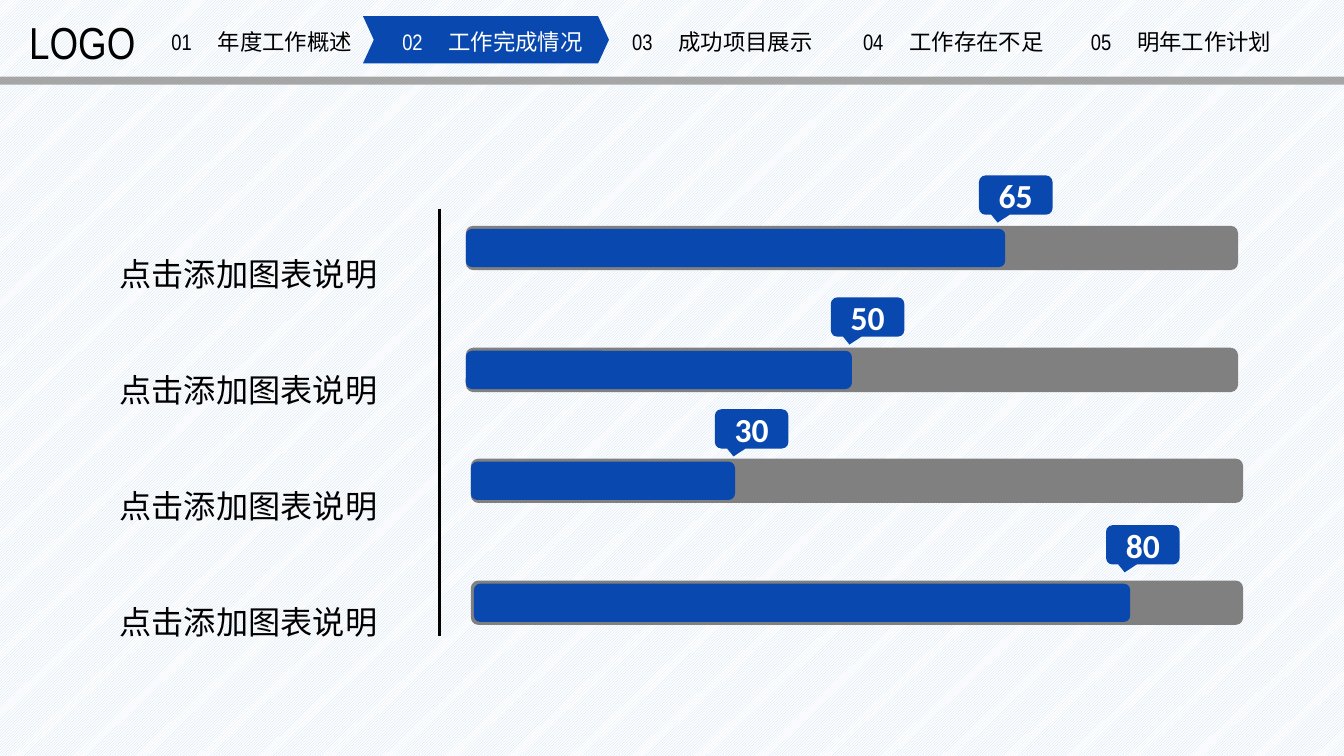
from lxml.etree import SubElement
from pptx import Presentation
from pptx.dml.color import RGBColor
from pptx.enum.dml import MSO_PATTERN
from pptx.enum.shapes import MSO_CONNECTOR, MSO_SHAPE
from pptx.enum.text import MSO_ANCHOR, PP_ALIGN
from pptx.oxml.ns import qn
from pptx.util import Pt

PX = 9144
BLUE, GRAY, SILVER = "0848AF", "808080", "A6A6A6"
BLACK, WHITE = "000000", "FFFFFF"
LATIN, HAN = "Arial Narrow", "Noto Sans CJK SC"

TABS = [
    (170, "01", "年度工作概述"),
    (399, "02", "工作完成情况"),
    (627, "03", "成功项目展示"),
    (856, "04", "工作存在不足"),
    (1082, "05", "明年工作计划"),
]
ACTIVE = "02"
LABELS = ["点击添加图表说明"] * 4
# value, track left and top, fill left and width, tag left and top
BARS = [
    (65, 462, 224, 462, 535, 971, 174),
    (50, 462, 345, 462, 383, 824, 295),
    (30, 467, 455, 467, 262, 709, 406),
    (80, 467, 576, 470, 651, 1097, 521),
]


def px(*sizes):
    """Turn pixel lengths into EMU."""
    return [size * PX for size in sizes]


def color(code):
    """Turn a hex string into a colour."""
    return RGBColor.from_string(code)


def write(para, text, font=LATIN, size=16, ink=BLACK, bold=False):
    """Add a formatted run to a paragraph."""
    run = para.add_run()
    run.text = text
    run.font.size = Pt(size)
    run.font.bold = bold
    run.font.color.rgb = color(ink)
    run.font.name = font
    SubElement(run.font._element, qn("a:ea"), typeface=font)


def inset(frame, side, edge):
    """Set the inner margins of a text frame."""
    frame.margin_left = frame.margin_right = side * PX
    frame.margin_top = frame.margin_bottom = edge * PX


def block(slide, kind, box, fill, adjust=()):
    """Add a flat preset shape."""
    shape = slide.shapes.add_shape(kind, *px(*box))
    shape.shadow.inherit = False
    shape.fill.solid()
    shape.fill.fore_color.rgb = color(fill)
    shape.line.fill.background()
    for index, value in enumerate(adjust):
        shape.adjustments[index] = value
    return shape


def label(slide, box):
    """Add a single-line text box and return its paragraph."""
    frame = slide.shapes.add_textbox(*px(*box)).text_frame
    frame.word_wrap = True
    frame.vertical_anchor = MSO_ANCHOR.MIDDLE
    inset(frame, 0, 0)
    return frame.paragraphs[0]


def header(slide):
    """Draw the navigation strip."""
    block(slide, MSO_SHAPE.RECTANGLE, (0, 76, 1333, 8), SILVER)
    block(slide, MSO_SHAPE.CHEVRON, (360, 16, 244, 47), BLUE, [0.23])
    for left, number, name in TABS:
        para = label(slide, (left, 28, 199, 27))
        stops = SubElement(para._p.get_or_add_pPr(), qn("a:tabLst"))
        SubElement(stops, qn("a:tab"), pos=str(46 * PX), algn="l")
        ink = WHITE if number == ACTIVE else BLACK
        write(para, number + "\t", ink=ink)
        write(para, name, font=HAN, ink=ink)
    write(label(slide, (29, 15, 110, 53)), "LOGO", size=32)


def bar(slide, value, left, top, start, width, flag, roof):
    """Draw a track, its filled part and the value tag."""
    pill = MSO_SHAPE.FLOWCHART_ALTERNATE_PROCESS
    block(slide, pill, (left, top, 766, 44), GRAY)
    block(slide, pill, (start, top + 3, width, 38), BLUE)
    tag = block(slide, MSO_SHAPE.ROUNDED_RECTANGULAR_CALLOUT,
                (flag, roof, 73, 39), BLUE, [-0.246, 0.7, 0.167])
    frame = tag.text_frame
    frame.vertical_anchor = MSO_ANCHOR.MIDDLE
    inset(frame, 14, 7)
    para = frame.paragraphs[0]
    para.alignment = PP_ALIGN.CENTER
    write(para, str(value), font="Calibri", size=24, ink=WHITE, bold=True)


def axis(slide):
    """Draw the upright line left of the bars."""
    line = slide.shapes.add_connector(
        MSO_CONNECTOR.STRAIGHT, *px(436, 207, 436, 631))
    line.line.color.rgb = color(BLACK)
    line.line.width = Pt(2.25)
    SubElement(line._element.spPr, qn("a:effectLst"))


def legend(slide):
    """Write the bar labels in one text box."""
    frame = slide.shapes.add_textbox(*px(84, 169, 325, 474)).text_frame
    frame.word_wrap = True
    inset(frame, 14, 7)
    for index, text in enumerate(LABELS):
        para = frame.add_paragraph() if index else frame.paragraphs[0]
        para.alignment = PP_ALIGN.CENTER
        para.line_spacing = 3.0
        write(para, text, font=HAN, size=23)


def main():
    """Build the slide and save it."""
    deck = Presentation()
    deck.slide_width, deck.slide_height = px(1333, 750)
    slide = deck.slides.add_slide(deck.slide_layouts[6])
    fill = slide.background.fill
    fill.patterned()
    fill.pattern = MSO_PATTERN.LIGHT_UPWARD_DIAGONAL
    fill.fore_color.rgb = color("C6D9F1")
    fill.back_color.rgb = color(WHITE)
    header(slide)
    for row in BARS:
        bar(slide, *row)
    axis(slide)
    legend(slide)
    deck.save("out.pptx")


if __name__ == "__main__":
    main()
